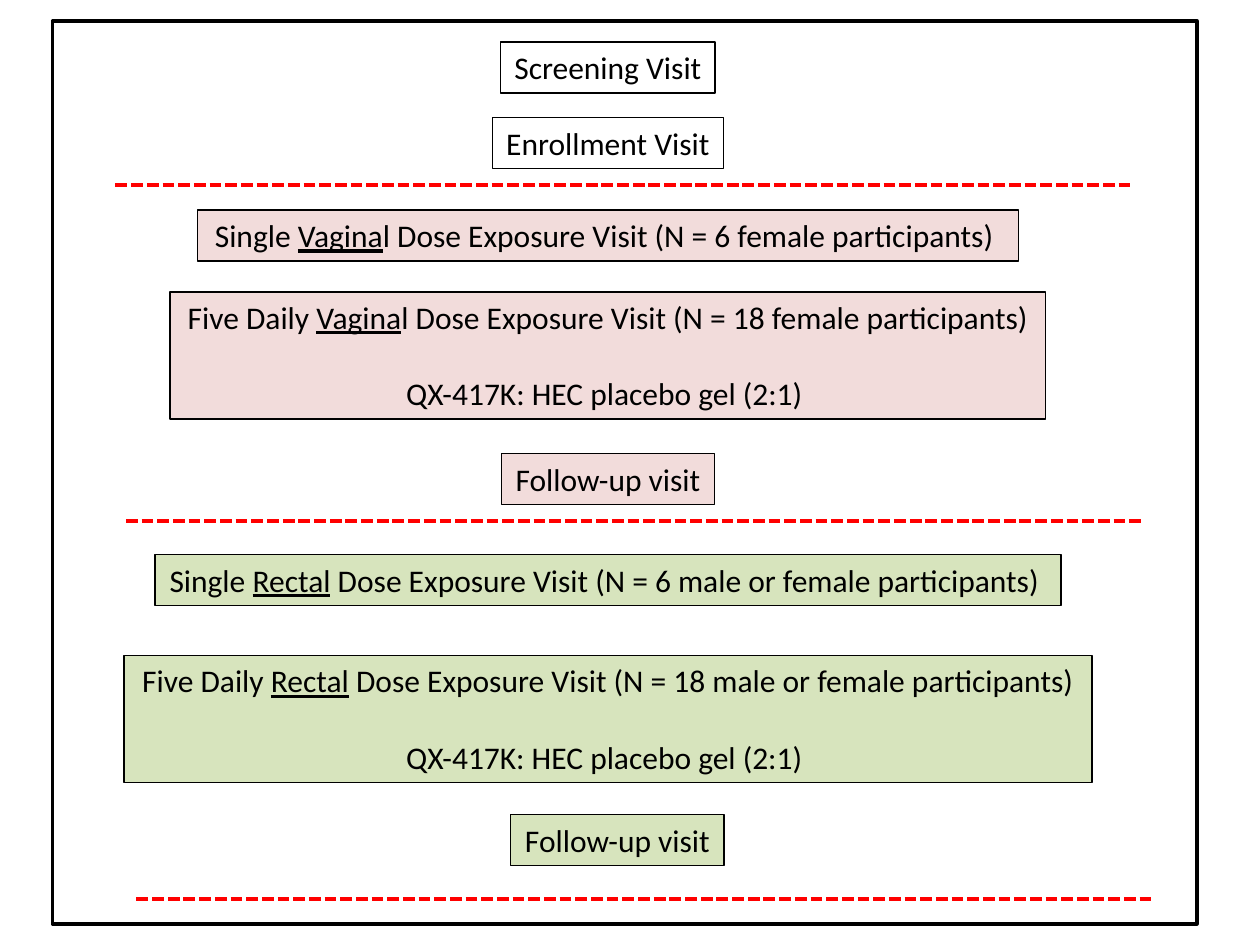
from collections import namedtuple
from pptx import Presentation
from pptx.dml.color import RGBColor as Rgb
from pptx.enum.dml import MSO_LINE as Dash
from pptx.enum.shapes import MSO_CONNECTOR as Link, MSO_SHAPE as Shape
from pptx.enum.text import MSO_AUTO_SIZE as Fit, PP_ALIGN as Align
from pptx.oxml.ns import qn
from pptx.util import Inches, Pt
from lxml.etree import SubElement

Box = namedtuple("Box", "left top width height")
Step = namedtuple("Step", "top width height shift lines")
Theme = namedtuple("Theme", "font size gap ink rule pink green thin frame dash")

THEME = Theme("Calibri", Pt(18), Pt(22), Rgb(0, 0, 0), Rgb(255, 0, 0),
              Rgb.from_string("F2DCDB"), Rgb.from_string("D7E4BD"),
              Pt(0.75), Pt(2), Pt(2.25))
COLS, ROWS = 120, 90
ONE, THREE = 4.85, 12.1
GEL = "QX-417K: HEC placebo gel (2:1) "
FRAME = Box(5, 2, 109, 86)
PHASES = [
    (Box(11, 4, 97, 13.6), None, [
        Step(0, 20.4, ONE, -1.6, ["Screening Visit"]),
        Step(7.2, 22, ONE, -1.6, ["Enrollment Visit"])]),
    (Box(12, 20, 97, 29.6), THEME.pink, [
        Step(0, 78.2, ONE, -2.6,
             ["Single _Vagina_l Dose Exposure Visit (N = 6 female participants) "]),
        Step(7.8, 83.4, THREE, -2.6,
             ["Five Daily _Vagina_l Dose Exposure Visit (N = 18 female participants)", GEL]),
        Step(23.2, 20.3, ONE, -2.6, ["Follow-up visit"])]),
    (Box(13, 52.8, 97, 32.8), THEME.green, [
        Step(0, 86.3, ONE, -3.6,
             ["Single _Rectal_ Dose Exposure Visit (N = 6 male or female participants) "]),
        Step(9.6, 92.2, THREE, -3.6,
             ["Five Daily _Rectal_ Dose Exposure Visit (N = 18 male or female participants)", GEL]),
        Step(24.8, 20.3, ONE, -2.7, ["Follow-up visit"])]),
]


def place(box):
    """Turn a box in columns and rows into lengths on the slide."""
    col, row = Inches(10) / COLS, Inches(7.5) / ROWS
    return [round(n * unit) for n, unit in zip(box, (col, row, col, row))]


def write(para, text):
    """Fill a paragraph, underlining the words between underscores."""
    para.alignment = Align.CENTER
    para.font.name, para.font.size = THEME.font, THEME.size
    para.font.color.rgb = THEME.ink
    for i, part in enumerate(text.split("_")):
        run = para.add_run()
        run.text = part
        if i % 2:
            run.font.underline = True


def add_step(slide, box, fill, lines):
    """Draw one visit as an outlined text box."""
    shape = slide.shapes.add_textbox(*place(box))
    shape.line.color.rgb, shape.line.width = THEME.ink, THEME.thin
    if fill:
        shape.fill.solid()
        shape.fill.fore_color.rgb = fill
    frame = shape.text_frame
    frame.word_wrap = False
    frame.auto_size = Fit.SHAPE_TO_FIT_TEXT
    for i, text in enumerate(lines):
        para = frame.add_paragraph() if i else frame.paragraphs[0]
        if i:
            para.space_before = THEME.gap
        write(para, text)


def add_rule(slide, box):
    """Draw a dashed rule along the foot of a box."""
    left, top, width, height = place(box)
    foot = top + height
    rule = slide.shapes.add_connector(Link.STRAIGHT, left, foot, left + width, foot)
    rule.line.color.rgb, rule.line.width = THEME.rule, THEME.dash
    rule.line.dash_style = Dash.SQUARE_DOT
    SubElement(rule.element.spPr, qn("a:effectLst"))


def add_phase(slide, box, fill, steps):
    """Stack the visits of a phase in its box and close it with a rule."""
    for step in steps:
        left = box.left + (box.width - step.width) / 2 + step.shift
        spot = Box(left, box.top + step.top, step.width, step.height)
        add_step(slide, spot, fill, step.lines)
    add_rule(slide, box)


def add_frame(slide, box):
    """Draw the outer border."""
    shape = slide.shapes.add_shape(Shape.RECTANGLE, *place(box))
    shape.shadow.inherit = False
    shape.fill.background()
    shape.line.color.rgb, shape.line.width = THEME.ink, THEME.frame


def main():
    """Build the study flow slide and save it."""
    deck = Presentation()
    deck.slide_width, deck.slide_height = Inches(10), Inches(7.5)
    slide = deck.slides.add_slide(deck.slide_layouts[6])
    for phase in PHASES:
        add_phase(slide, *phase)
    add_frame(slide, FRAME)
    deck.save("out.pptx")


if __name__ == "__main__":
    main()
